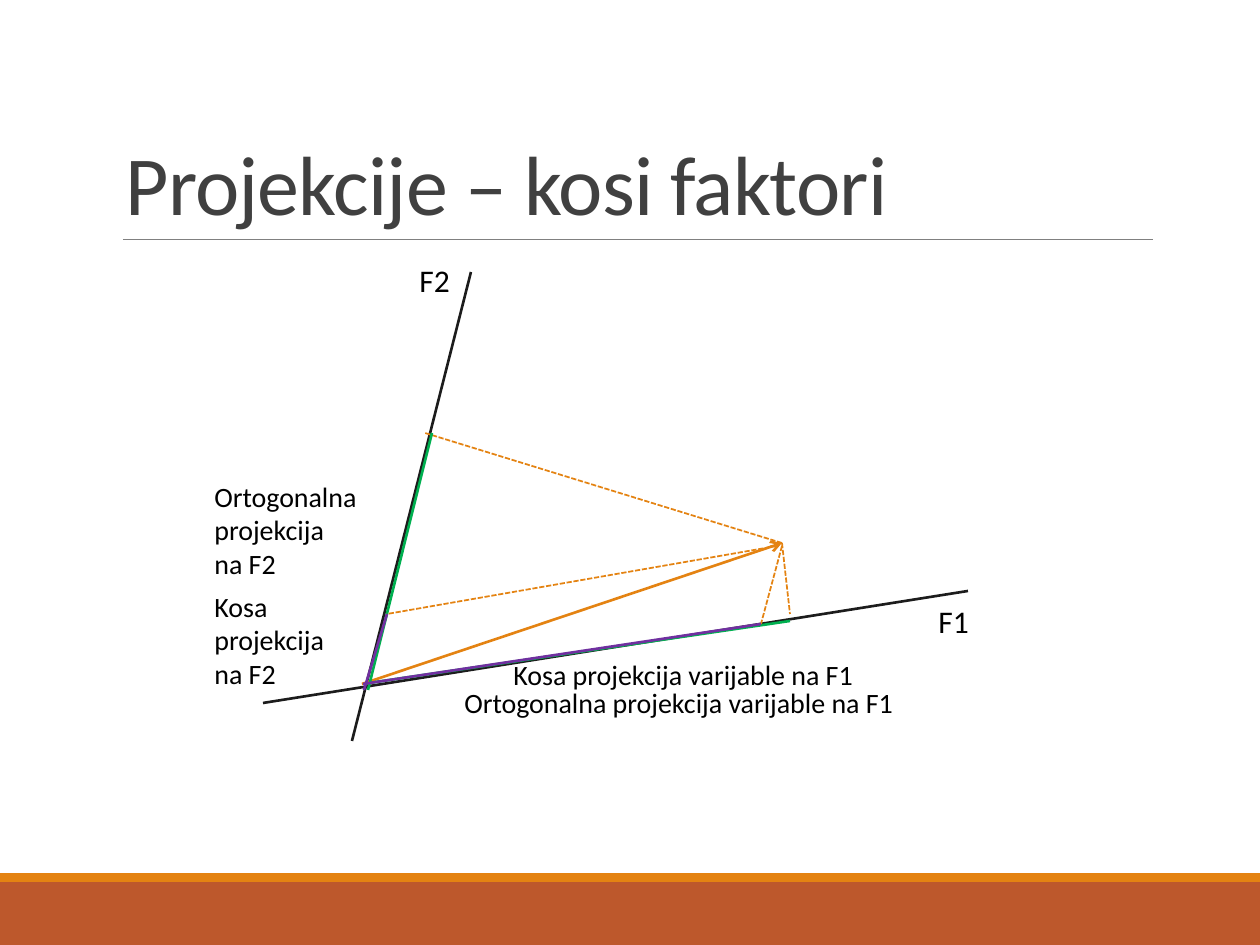
from pptx import Presentation
from pptx.dml.color import RGBColor
from pptx.enum.dml import MSO_LINE_DASH_STYLE as Dash
from pptx.enum.shapes import MSO_CONNECTOR as Conn, MSO_SHAPE as Shape
from pptx.enum.text import MSO_ANCHOR as Anchor, MSO_AUTO_SIZE as Fit, PP_ALIGN as Align
from pptx.oxml.ns import qn
from pptx.util import Pt
from lxml.etree import SubElement

PX = 914400 / 126
RUST = RGBColor(0xBD, 0x58, 0x2C)
ORANGE = RGBColor(0xE4, 0x83, 0x12)
GRAY = RGBColor(0x80, 0x80, 0x80)
DARK = RGBColor(0x40, 0x40, 0x40)
INK = RGBColor(0x1C, 0x1C, 0x1C)
GREEN = RGBColor(0x00, 0xB0, 0x50)
PURPLE = RGBColor(0x70, 0x30, 0xA0)
BLACK = RGBColor(0, 0, 0)


def emu(*vals):
    return [round(v * PX) for v in vals]


def style(font, **vals):
    """Set font attributes; color takes an RGBColor."""
    font.color.rgb = vals.pop("color")
    for key, val in vals.items():
        setattr(font, key, val)


deck = Presentation()
deck.slide_width, deck.slide_height = emu(1260, 945)
slide = deck.slides.add_slide(deck.slide_layouts[5])
shapes = slide.shapes

# Footer bands
for top, high, color in [(882, 63, RUST), (873, 9, ORANGE)]:
    band = shapes.add_shape(Shape.RECTANGLE, *emu(0, top, 1260, high))
    band.shadow.inherit = False
    band.fill.solid()
    band.fill.fore_color.rgb = color
    band.line.fill.background()

# Title
title = shapes.title
title.left, title.top, title.width, title.height = emu(113, 39, 1040, 200)
frame = title.text_frame
frame.vertical_anchor = Anchor.BOTTOM
frame.auto_size = Fit.NONE
para = frame.paragraphs[0]
para.alignment = Align.LEFT
para.line_spacing = 0.85
run = para.add_run()
run.text = "Projekcije – kosi faktori"
style(run.font, name="Calibri", size=Pt(48), color=DARK)
run.font._element.set("spc", "-50")

# Rule, axes, variable vector and its projections
lines = [
    ("rule", 123, 239, 1153, 239),
    ("axis", 471, 272, 352, 741),
    ("axis", 968, 591, 263, 703),
    ("vector", 362, 684, 782, 543),
    ("drop", 782, 543, 790, 614),
    ("drop", 782, 543, 425, 433),
    ("ortho", 369, 683, 790, 621),
    ("ortho", 368, 690, 432, 433),
    ("drop", 782, 546, 761, 624),
    ("oblique", 363, 684, 761, 624),
    ("drop", 777, 546, 387, 614),
    ("oblique", 364, 690, 387, 614),
]
looks = {
    "rule": (GRAY, 0.5),
    "axis": (INK, 1.5),
    "vector": (ORANGE, 1.5),
    "drop": (ORANGE, 1),
    "ortho": (GREEN, 1.5),
    "oblique": (PURPLE, 1.5),
}
for kind, *ends in lines:
    line = shapes.add_connector(Conn.STRAIGHT, *emu(*ends))
    color, width = looks[kind]
    line.line.color.rgb = color
    line.line.width = Pt(width)
    if kind == "drop":
        line.line.dash_style = Dash.SQUARE_DOT
    if kind == "vector":
        SubElement(line.line._get_or_add_ln(), qn("a:tailEnd"), type="arrow")
    SubElement(line._element.spPr, qn("a:effectLst"))

# Labels
labels = [
    (926, 596, 83, 55, 18, False, ["F1"]),
    (407, 255, 83, 55, 18, False, ["F2"]),
    (452, 679, 465, 47, 16, False, ["Ortogonalna projekcija varijable na F1"]),
    (202, 473, 185, 115, 16, True, ["Ortogonalna projekcija", "na F2"]),
    (501, 651, 382, 47, 16, False, ["Kosa projekcija varijable na F1"]),
    (202, 583, 185, 115, 16, True, ["Kosa", "projekcija", "na F2"]),
]
for left, top, wide, high, size, wrap, texts in labels:
    frame = shapes.add_textbox(*emu(left, top, wide, high)).text_frame
    frame.word_wrap = wrap
    frame.auto_size = Fit.SHAPE_TO_FIT_TEXT
    frame.text = "\n".join(texts)
    for para in frame.paragraphs:
        style(para.runs[0].font, name="Calibri", size=Pt(size), color=BLACK)

deck.save("out.pptx")
